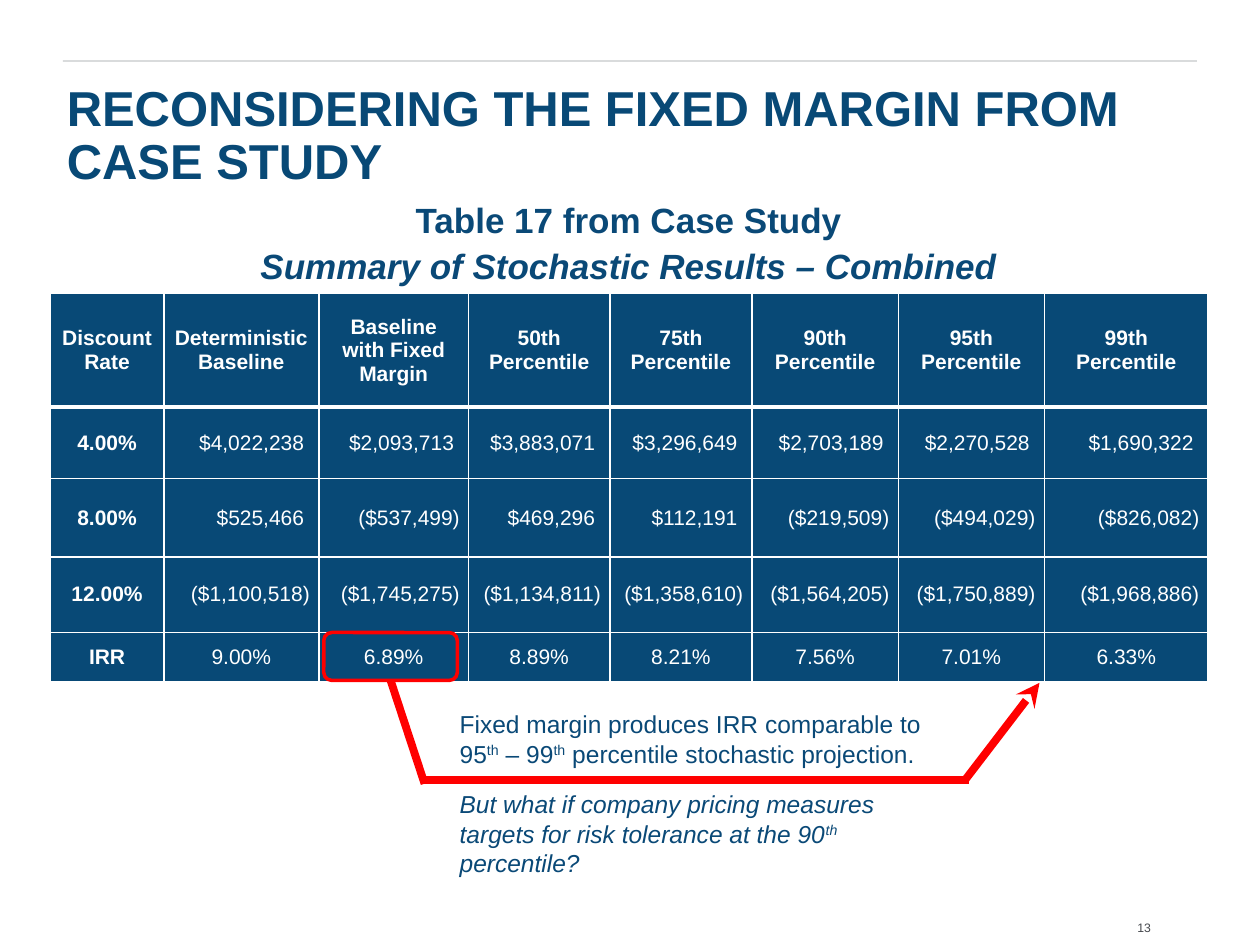
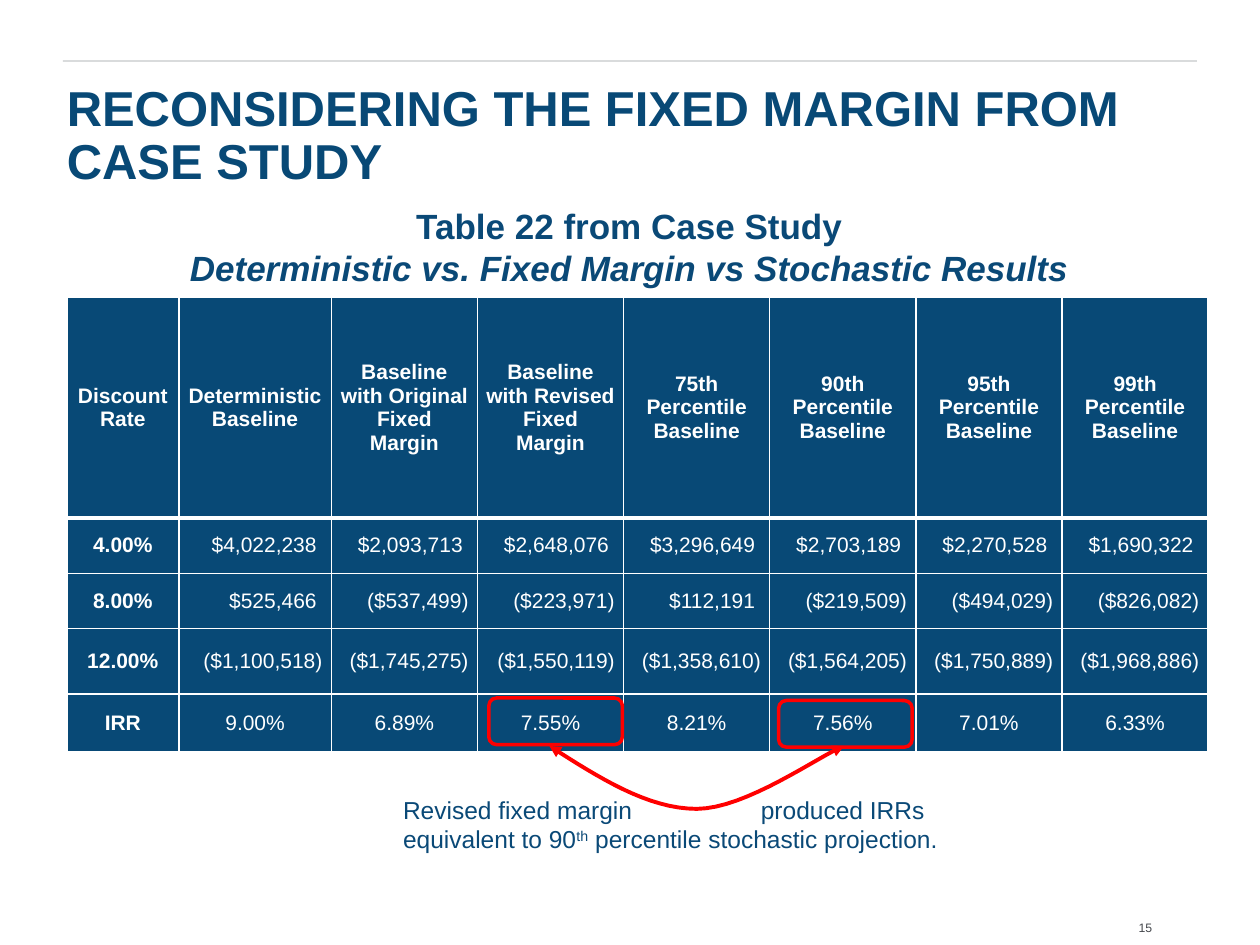
"""Two slides that reconsider the fixed margin against stochastic results."""
from dataclasses import dataclass

import pptx
import pptx.util
import pptx.dml.color
import pptx.enum.shapes
import pptx.enum.text
import pptx.oxml
import pptx.oxml.ns

ALIGN = pptx.enum.text.PP_ALIGN
ANCHOR = pptx.enum.text.MSO_ANCHOR
AUTO_SIZE = pptx.enum.text.MSO_AUTO_SIZE
SHAPE = pptx.enum.shapes.MSO_SHAPE
SLIDE_WIDTH = pptx.util.Inches(10)
SLIDE_HEIGHT = pptx.util.Inches(7.5)
GRID_COLUMNS = 100
TITLE = "RECONSIDERING THE FIXED MARGIN FROM CASE STUDY"


@dataclass(frozen=True)
class Theme:
    """Colours, font, type sizes and line widths of the deck."""
    font: str = "Arial"
    navy: str = "084976"
    ink: str = "0A4977"
    white: str = "FFFFFF"
    rule: str = "C6C9CA"
    footer: str = "45484D"
    accent: str = "FF0000"
    title_size: float = 28
    caption_size: float = 20
    note_size: float = 14
    cell_size: float = 12
    footer_size: float = 7
    thin_border: float = 1
    header_border: float = 3


THEME = Theme()
RATES = ("4.00%", "8.00%", "12.00%", "IRR")
RESULTS = {
    "deterministic": ("$4,022,238", "$525,466", "($1,100,518)", "9.00%"),
    "fixed": ("$2,093,713", "($537,499)", "($1,745,275)", "6.89%"),
    "revised": ("$2,648,076", "($223,971)", "($1,550,119)", "7.55%"),
    "50th": ("$3,883,071", "$469,296", "($1,134,811)", "8.89%"),
    "75th": ("$3,296,649", "$112,191", "($1,358,610)", "8.21%"),
    "90th": ("$2,703,189", "($219,509)", "($1,564,205)", "7.56%"),
    "95th": ("$2,270,528", "($494,029)", "($1,750,889)", "7.01%"),
    "99th": ("$1,690,322", "($826,082)", "($1,968,886)", "6.33%"),
}


def grid(*counts):
    """Convert counts of square grid units to lengths."""
    return [pptx.util.Emu(round(count * SLIDE_WIDTH / GRID_COLUMNS)) for count in counts]


def rgb(colour):
    """Return the colour object of a hex string."""
    return pptx.dml.color.RGBColor.from_string(colour)


def apply_format(target, values):
    """Set every attribute named in values."""
    for name, value in values.items():
        setattr(target, name, value)


def drawing_xml(xml):
    """Parse a DrawingML element."""
    return pptx.oxml.parse_xml(xml.replace(" ", f" {pptx.oxml.ns.nsdecls('a')} ", 1))


def write(paragraph, text, size, colour, layout=None, **style):
    """Fill a paragraph; parts between carets are superscript."""
    apply_format(paragraph, layout or {})
    for index, part in enumerate(text.split("^")):
        run = paragraph.add_run()
        run.text = part
        apply_format(run.font, {"name": THEME.font, "size": pptx.util.Pt(size), **style})
        run.font.color.rgb = rgb(colour)
        if index % 2:
            run.font._element.set("baseline", "30000")


def set_frame(frame, inset=None, **values):
    """Wrap a text frame and set its insets and other values."""
    apply_format(frame, {"word_wrap": True, "auto_size": AUTO_SIZE.NONE, **values})
    if inset is not None:
        sides = ("left", "top", "right", "bottom")
        apply_format(frame, {f"margin_{side}": inset for side in sides})


def add_text(slide, area, paragraphs, size, colour, layout, inset=None, **frame_values):
    """Add a text box from (text, style) pairs."""
    frame = slide.shapes.add_textbox(*grid(*area)).text_frame
    set_frame(frame, inset, **frame_values)
    for index, (text, style) in enumerate(paragraphs):
        paragraph = frame.add_paragraph() if index else frame.paragraphs[0]
        write(paragraph, text, size, colour, layout, **style)
    return frame


def add_page(deck, number, number_left):
    """Add a slide with the shared rule, title and page number."""
    slide = deck.slides.add_slide(deck.slide_layouts[5])
    rule = slide.shapes.add_shape(SHAPE.RECTANGLE, *grid(5, 4.8, 90, 0.1))
    rule.shadow.inherit = False
    rule.fill.solid()
    rule.fill.fore_color.rgb = rgb(THEME.rule)
    rule.line.fill.background()
    title = slide.shapes.title
    apply_format(title, dict(zip(("left", "top", "width", "height"), grid(5.3, 6.7, 89.2, 3.4))))
    set_frame(title.text_frame, 0, vertical_anchor=ANCHOR.TOP)
    write(title.text_frame.paragraphs[0], TITLE, THEME.title_size, THEME.navy,
          {"alignment": ALIGN.LEFT, "line_spacing": 0.9}, bold=True)
    add_text(slide, (number_left, 71.9, 8.2, 2.3), [(number, {})], THEME.footer_size,
             THEME.footer, {"alignment": ALIGN.CENTER}, 0, vertical_anchor=ANCHOR.BOTTOM)
    return slide


def add_caption(slide, area, name, subject, spacing, inset=None):
    """Add the two centred lines above a table."""
    add_text(slide, area, [(name, {"bold": True}), (subject, {"bold": True, "italic": True})],
             THEME.caption_size, THEME.ink,
             {"alignment": ALIGN.CENTER, "line_spacing": spacing}, inset)


def add_note(slide, area, paragraphs):
    """Add the comment below a table."""
    return add_text(slide, area, paragraphs, THEME.note_size, THEME.ink,
                    {"space_after": pptx.util.Pt(12)}, auto_size=AUTO_SIZE.SHAPE_TO_FIT_TEXT)


def border_cell(cell, top, bottom):
    """Draw the white borders of a cell."""
    thin = THEME.thin_border
    widths = {"L": thin, "R": thin, "T": top, "B": bottom}
    properties = cell._tc.get_or_add_tcPr()
    for index, (side, width) in enumerate(widths.items()):
        properties.insert(index, drawing_xml(
            f'<a:ln{side} w="{pptx.util.Pt(width)}"><a:solidFill>'
            f'<a:srgbClr val="{THEME.white}"/></a:solidFill></a:ln{side}>'))


def format_cell(cell, text, row, column):
    """Write one result, label or heading with its fill and borders."""
    margin = grid(0.7)[0]
    apply_format(cell, {"vertical_anchor": ANCHOR.MIDDLE, "margin_left": margin,
                        "margin_right": margin, "margin_top": 0, "margin_bottom": 0})
    is_label = row == 0 or column == 0
    is_amount = not is_label and row < len(RATES)
    if is_amount and not text.endswith(")"):
        text += " "
    write(cell.text_frame.paragraphs[0], text, THEME.cell_size, THEME.white,
          {"alignment": ALIGN.RIGHT if is_amount else ALIGN.CENTER}, bold=is_label)
    cell.fill.solid()
    cell.fill.fore_color.rgb = rgb(THEME.navy)
    border_cell(cell, THEME.header_border if row == 1 else THEME.thin_border,
                THEME.header_border if row == 0 else THEME.thin_border)


def add_results(slide, corner, widths, heights, scenarios):
    """Add a table of discount rates against (heading, scenario) pairs."""
    columns = [("Discount Rate", *RATES)]
    columns += [(heading, *RESULTS[scenario]) for heading, scenario in scenarios]
    table = slide.shapes.add_table(len(heights), len(widths),
                                   *grid(*corner, sum(widths), sum(heights))).table
    table.horz_banding = False
    for row, height in zip(table.rows, grid(*heights)):
        row.height = height
    for index, width in enumerate(grid(*widths)):
        table.columns[index].width = width
        for row, text in enumerate(columns[index]):
            format_cell(table.cell(row, index), text, row, index)


def style_stroke(stroke, width, **ends):
    """Give a line the accent colour, a width and arrowheads."""
    stroke.line.color.rgb = rgb(THEME.accent)
    stroke.line.width = pptx.util.Pt(width)
    outline = stroke.element.spPr.find(pptx.oxml.ns.qn("a:ln"))
    for end, arrow in ends.items():
        outline.append(drawing_xml(f'<a:{end}End type="{arrow}"/>'))


def add_highlight(slide, left, top, height):
    """Outline one IRR value."""
    highlight = slide.shapes.add_shape(SHAPE.ROUNDED_RECTANGLE, *grid(left, top, 10.6, height))
    highlight.shadow.inherit = False
    highlight.fill.background()
    style_stroke(highlight, 2)
    return highlight


def add_link(slide, start, end, **ends):
    """Add a thick straight line between two points."""
    link = slide.shapes.add_connector(pptx.enum.shapes.MSO_CONNECTOR.STRAIGHT,
                                      *grid(*start, *end))
    style_stroke(link, 4.5, **ends)
    link.element.spPr.append(drawing_xml("<a:effectLst />"))
    return link


def bezier(points, steps=16):
    """Return points along a cubic curve, without its start."""
    weights = (1, 3, 3, 1)
    shares = [step / steps for step in range(1, steps + 1)]
    return [tuple(sum(weight * (1 - t) ** (3 - k) * t ** k * point[axis]
                      for k, (weight, point) in enumerate(zip(weights, points)))
                  for axis in (0, 1)) for t in shares]


def add_curve(slide, *segments):
    """Add a curve with an arrowhead at each end."""
    builder = slide.shapes.build_freeform(*grid(*segments[0][0]))
    for segment in segments:
        builder.add_line_segments([grid(*point) for point in bezier(segment)], close=False)
    curve = builder.convert_to_shape()
    curve.shadow.inherit = False
    curve.fill.background()
    style_stroke(curve, 2.25, head="triangle", tail="triangle")


def build_combined(deck):
    """Compare the fixed margin with the stochastic percentiles."""
    slide = add_page(deck, "13", 86.7)
    percentiles = [(f"{rank} Percentile", rank) for rank in ("50th", "75th", "90th", "95th", "99th")]
    add_results(slide, (4, 23.3), (9, 12.3, 11.9, 11.2, 11.3, 11.6, 11.6, 13),
                (9, 5.7, 6.2, 6, 3.9),
                [("Deterministic Baseline", "deterministic"),
                 ("Baseline with Fixed Margin", "fixed"), *percentiles])
    add_caption(slide, (5.3, 15.4, 89.2, 7.5), "Table 17 from Case Study",
                "Summary of Stochastic Results – Combined", 1.1, 0)
    add_link(slide, (33.5, 61.9), (76.9, 61.9))
    drop = add_link(slide, (31, 54), (33.7, 62.2))
    add_link(slide, (82.5, 54.2), (76.6, 61.9), head="stealth")
    drop.begin_connect(add_highlight(slide, 25.7, 50.2, 3.8), 2)
    add_note(slide, (35.5, 55.8, 41.3, 12.1), [
        ("Fixed margin produces IRR comparable to 95^th^ – 99^th^ percentile "
         "stochastic projection.", {}),
        ("But what if company pricing measures targets for risk tolerance at the "
         "90^th^ percentile?", {"italic": True})])


def build_revised(deck):
    """Compare the revised fixed margin with the 90th percentile."""
    slide = add_page(deck, "15", 86.8)
    percentiles = [(f"{rank} Percentile Baseline", rank) for rank in ("75th", "90th", "95th", "99th")]
    add_results(slide, (5.3, 23.6), (8.9, 12.1, *[11.6] * 6), (17.5, 4.4, 4.4, 5.2, 4.6),
                [("Deterministic Baseline", "deterministic"),
                 ("Baseline with Original Fixed Margin", "fixed"),
                 ("Baseline with Revised Fixed Margin", "revised"), *percentiles])
    add_highlight(slide, 38.8, 55.4, 3.7)
    add_highlight(slide, 61.8, 55.6, 3.7)
    add_curve(slide, ((43.6, 59.2), (47.5, 61.7), (51.4, 64.2), (55.3, 64.2)),
              ((55.3, 64.2), (59.2, 64.2), (65, 60), (67, 59.2)))
    note = add_note(slide, (31, 62.6, 44.8, 5.7), [
        ("Revised fixed margin\tproduced IRRs equivalent to 90^th^ percentile "
         "stochastic projection.", {})])
    note.paragraphs[0]._p.get_or_add_pPr().append(drawing_xml(
        f'<a:tabLst ><a:tab pos="{grid(28.4)[0]}" algn="l"/></a:tabLst>'))
    add_caption(slide, (6.6, 15.7, 86.7, 7.7), "Table 22 from Case Study",
                "Deterministic vs. Fixed Margin vs Stochastic Results", 1.0)


def main():
    """Build and save the deck."""
    deck = pptx.Presentation()
    apply_format(deck, {"slide_width": SLIDE_WIDTH, "slide_height": SLIDE_HEIGHT})
    build_combined(deck)
    build_revised(deck)
    deck.save("out.pptx")


if __name__ == "__main__":
    main()
